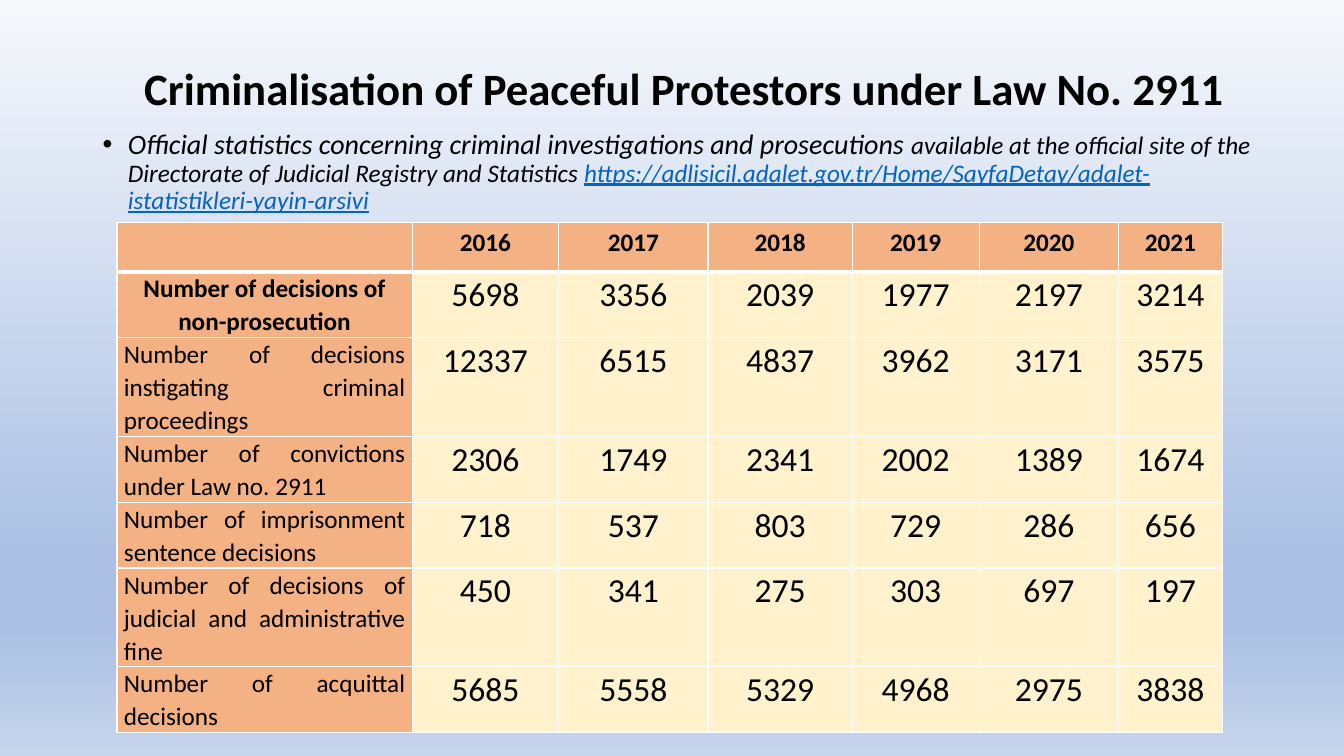
"""Build the slide on criminalisation of peaceful protestors under Law No. 2911."""
from dataclasses import dataclass

from lxml import etree
from pptx import Presentation
from pptx.dml.color import RGBColor
from pptx.enum.text import MSO_ANCHOR, MSO_AUTO_SIZE, PP_ALIGN
from pptx.oxml.ns import qn
from pptx.util import Pt

CENTER, JUSTIFY = PP_ALIGN.CENTER, PP_ALIGN.JUSTIFY
MIDDLE, TOP = MSO_ANCHOR.MIDDLE, MSO_ANCHOR.TOP
NO_AUTOFIT = MSO_AUTO_SIZE.NONE


@dataclass(frozen=True)
class Theme:
    font: str = "Calibri"
    ink: str = "000000"
    link: str = "0563C1"
    label_fill: str = "F4B183"
    value_fill: str = "FFF2CC"
    border: str = "FFFFFF"
    sky: tuple = ((0, "F6F8FC"), (74, "ABC0E4"), (83, "ABC0E4"), (100, "C7D5ED"))
    title_size: int = 32
    lead_size: int = 20
    text_size: int = 18
    value_size: int = 24


THEME = Theme()


@dataclass(frozen=True)
class Span:
    text: str
    size: int = THEME.text_size
    color: str = THEME.ink
    bold: bool = False
    italic: bool = False
    underline: bool = False


@dataclass(frozen=True)
class Statistic:
    label: str
    counts: tuple
    heading: bool = False


TITLE = Span("Criminalisation of Peaceful Protestors under Law No. 2911",
             THEME.title_size, bold=True)
SOURCE_NOTE = (
    Span("Official statistics concerning criminal investigations and prosecutions ",
         THEME.lead_size, italic=True),
    Span("available at the official site of the Directorate of Judicial Registry "
         "and Statistics ", italic=True),
    Span("https://adlisicil.adalet.gov.tr/Home/SayfaDetay/adalet-istatistikleri-yayin-arsivi",
         color=THEME.link, italic=True, underline=True),
)
YEARS = range(2016, 2022)
STATISTICS = (
    Statistic("Number of decisions of non-prosecution",
              (5698, 3356, 2039, 1977, 2197, 3214), heading=True),
    Statistic("Number of decisions instigating criminal proceedings",
              (12337, 6515, 4837, 3962, 3171, 3575)),
    Statistic("Number of convictions under Law no. 2911",
              (2306, 1749, 2341, 2002, 1389, 1674)),
    Statistic("Number of imprisonment sentence decisions",
              (718, 537, 803, 729, 286, 656)),
    Statistic("Number of decisions of judicial and administrative fine",
              (450, 341, 275, 303, 697, 197)),
    Statistic("Number of acquittal decisions",
              (5685, 5558, 5329, 4968, 2975, 3838)),
)
COLUMN_WIDTHS = (211, 104.5, 106.8, 103, 90.7, 99.5, 74.2)
HEADER_HEIGHT, ROW_HEIGHT = 35.2, 40.3


def add_span(paragraph, span: Span) -> None:
    """Append one formatted run."""
    run = paragraph.add_run()
    run.text = span.text
    font = run.font
    font.name, font.size = THEME.font, Pt(span.size)
    font.bold, font.italic, font.underline = span.bold, span.italic, span.underline
    font.color.rgb = RGBColor.from_string(span.color)


def place(placeholder, left: float, top: float, width: float, height: float, anchor):
    """Position a placeholder and return its first paragraph."""
    placeholder.left, placeholder.top = Pt(left), Pt(top)
    placeholder.width, placeholder.height = Pt(width), Pt(height)
    frame = placeholder.text_frame
    frame.auto_size, frame.word_wrap = NO_AUTOFIT, True
    frame.vertical_anchor = anchor
    paragraph = frame.paragraphs[0]
    paragraph.line_spacing = 0.9
    return paragraph


def paint_background(slide) -> None:
    """Fill the background with the vertical gradient."""
    fill = slide.background.fill
    fill.gradient()
    fill.gradient_angle = 270
    stops = slide.element.find(".//" + qn("a:gsLst"))
    for stop in list(stops):
        stops.remove(stop)
    for percent, color in THEME.sky:
        stop = etree.SubElement(stops, qn("a:gs"), pos=str(percent * 1000))
        etree.SubElement(stop, qn("a:srgbClr"), val=color)


def style_cell(cell, fill: str, bottom_width: int = 1) -> None:
    """Give a cell its borders and fill."""
    properties = cell._tc.get_or_add_tcPr()
    for side, width in (("L", 1), ("R", 1), ("T", 1), ("B", bottom_width)):
        line = etree.SubElement(properties, qn(f"a:ln{side}"), w=str(Pt(width)))
        solid = etree.SubElement(line, qn("a:solidFill"))
        etree.SubElement(solid, qn("a:srgbClr"), val=THEME.border)
    cell.fill.solid()
    cell.fill.fore_color.rgb = RGBColor.from_string(fill)


def write_body_cell(cell, span: Span, alignment, fill: str) -> None:
    """Write a cell below the header row."""
    style_cell(cell, fill)
    cell.margin_left = cell.margin_right = Pt(5.04)
    cell.margin_top = cell.margin_bottom = Pt(0)
    paragraph = cell.text_frame.paragraphs[0]
    paragraph.alignment = alignment
    paragraph.line_spacing, paragraph.space_after = 1.07, Pt(8)
    add_span(paragraph, span)


def add_statistics(slide) -> None:
    """Add the table of decisions by year."""
    height = HEADER_HEIGHT + ROW_HEIGHT * len(STATISTICS)
    table = slide.shapes.add_table(
        len(STATISTICS) + 1, len(COLUMN_WIDTHS), Pt(83.5), Pt(159),
        Pt(sum(COLUMN_WIDTHS)), Pt(height)).table
    table.horz_banding = False
    for column, width in zip(table.columns, COLUMN_WIDTHS):
        column.width = Pt(width)
    for index, row in enumerate(table.rows):
        row.height = Pt(ROW_HEIGHT if index else HEADER_HEIGHT)

    style_cell(table.cell(0, 0), THEME.label_fill, 3)
    for column, year in enumerate(YEARS, 1):
        cell = table.cell(0, column)
        style_cell(cell, THEME.label_fill, 3)
        paragraph = cell.text_frame.paragraphs[0]
        paragraph.alignment = CENTER
        add_span(paragraph, Span(str(year), bold=True))

    for row, statistic in enumerate(STATISTICS, 1):
        write_body_cell(table.cell(row, 0), Span(statistic.label, bold=statistic.heading),
                        CENTER if statistic.heading else JUSTIFY, THEME.label_fill)
        for column, count in enumerate(statistic.counts, 1):
            write_body_cell(table.cell(row, column), Span(str(count), THEME.value_size),
                            CENTER, THEME.value_fill)


def main() -> None:
    """Build and save the presentation."""
    deck = Presentation()
    deck.slide_width, deck.slide_height = Pt(960), Pt(540)
    slide = deck.slides.add_slide(deck.slide_layouts[1])
    paint_background(slide)

    heading = place(slide.shapes.title, 83.5, 28.8, 810.7, 72, MIDDLE)
    heading.alignment = CENTER
    add_span(heading, TITLE)

    note = place(slide.placeholders[1], 66.2, 89.3, 835.2, 365, TOP)
    note.space_before = Pt(10)
    for span in SOURCE_NOTE:
        add_span(note, span)
    properties = note._p.get_or_add_pPr()
    properties.set("marL", str(Pt(18)))
    properties.set("indent", str(Pt(-18)))
    etree.SubElement(properties, qn("a:buFont"), typeface="Arial")
    etree.SubElement(properties, qn("a:buChar"), char="•")

    add_statistics(slide)
    deck.save("out.pptx")


if __name__ == "__main__":
    main()
